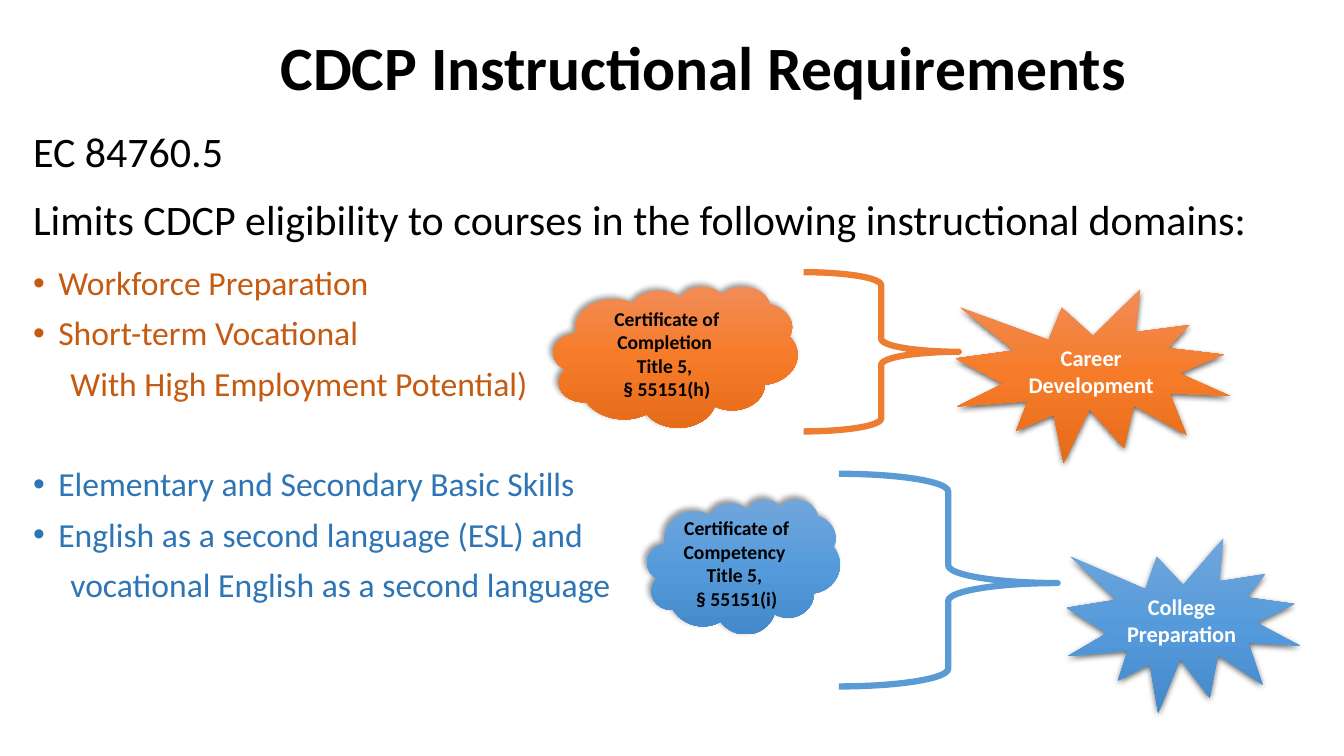
import copy

import pptx
import pptx.util
import pptx.dml.color
import pptx.enum.shapes
import pptx.enum.text
import pptx.oxml
import pptx.oxml.ns

PX = 9144  # 100 px to the inch
FONT = "Calibri"
KIND = pptx.enum.shapes.MSO_SHAPE
ALIGN = pptx.enum.text.PP_ALIGN
ANCHOR = pptx.enum.text.MSO_ANCHOR
NS = pptx.oxml.ns.nsdecls("a")

# Content
TITLE = "CDCP Instructional Requirements"
RUST, NAVY, BLACK, WHITE = "C55A11", "2E75B6", "000000", "FFFFFF"
LEAD = dict(size=30, color=BLACK, after=6)
WORK = dict(size=24, color=RUST)
STUDY = dict(size=24, color=NAVY)
POINT = dict(left=25, hang=25, bullet="•")
BODY = [
    ("EC 84760.5", LEAD),
    ("Limits CDCP eligibility to courses in the following instructional domains:", LEAD),
    ("Workforce Preparation", WORK | POINT),
    ("Short-term Vocational", WORK | POINT),
    ("With High Employment Potential)", WORK | dict(left=37)),
    ("Elementary and Secondary Basic Skills", STUDY | POINT | dict(before=46)),
    ("English as a second language (ESL) and", STUDY | POINT),
    ("vocational English as a second language", STUDY | dict(left=37)),
]

ORANGE = ("F18C57", "F67B28", "E56C19")
BLUE = ("71A6DB", "559BDB", "448ACA")
# Shadow: opacity %, blur pt, distance pt, angle
DROP = (63, 4.5, 1.5, 90)
EDGE = (40, 4, 3, 225)
BURST = KIND.EXPLOSION1
# Kind, box, gradient, shadow, lines, size, colour
FORMS = [
    (BURST, (1058, 534, 231, 173), BLUE, DROP, ["College Preparation"], 16, WHITE),
    (BURST, (948, 287, 272, 172), ORANGE, DROP, ["Career Development"], 16, WHITE),
    (KIND.CLOUD, (549, 284, 242, 140), ORANGE, EDGE,
     ["Certificate of Completion ", "Title 5, ", "§ 55151(h)"], 14, BLACK),
    (KIND.CLOUD, (642, 495, 191, 134), BLUE, EDGE,
     ["Certificate of Competency ", "Title 5, ", "§ 55151(i)"], 14, BLACK),
]
# Box, colour, tip position
BRACES = [
    ((797, 270, 154, 158), "ED7D31", 0.5),
    ((832, 470, 217, 211), "5B9BD5", 0.514),
]


def rgb(code):
    return pptx.dml.color.RGBColor.from_string(code)


def place(box):
    return [n * PX for n in box]


def write(frame, text, size=24, color=BLACK, bold=False, align=ALIGN.LEFT,
          space=0.9, before=10, after=0, left=0, hang=0, bullet=None):
    """Fill the first paragraph if it is free, else add one."""
    para = frame.paragraphs[0]
    if para.runs:
        para = frame.add_paragraph()
    para.alignment = align
    para.line_spacing = space
    para.space_before = pptx.util.Pt(before)
    para.space_after = pptx.util.Pt(after)
    run = para.add_run()
    run.text = text
    font = run.font
    font.name, font.size, font.bold = FONT, pptx.util.Pt(size), bold
    font.color.rgb = rgb(color)
    props = para._p.get_or_add_pPr()
    props.set("marL", str(left * PX))
    props.set("indent", str(-hang * PX))
    if bullet:
        props.append(pptx.oxml.parse_xml(f'<a:buFont {NS} typeface="Arial"/>'))
        props.append(pptx.oxml.parse_xml(f'<a:buChar {NS} char="{bullet}"/>'))


def shade(shape, tones):
    """Three-stop gradient from top to bottom."""
    fill = shape.fill
    fill.gradient()
    fill.gradient_angle = 270
    first = shape._element.spPr.find(".//" + pptx.oxml.ns.qn("a:gs"))
    first.addnext(copy.deepcopy(first))
    for k, (stop, tone) in enumerate(zip(fill.gradient_stops, tones)):
        stop.position = k / 2
        stop.color.rgb = rgb(tone)


def cast(shape, alpha, blur, dist, angle):
    """Put an outer shadow into the shape's effect list."""
    effects = shape._element.spPr.find(pptx.oxml.ns.qn("a:effectLst"))
    effects.append(pptx.oxml.parse_xml(
        f'<a:outerShdw {NS} blurRad="{pptx.util.Pt(blur)}" dist="{pptx.util.Pt(dist)}" '
        f'dir="{angle * 60000}" rotWithShape="0"><a:srgbClr val="{BLACK}">'
        f'<a:alpha val="{alpha * 1000}"/></a:srgbClr></a:outerShdw>'))


def main():
    deck = pptx.Presentation()
    deck.slide_width, deck.slide_height = 1333 * PX, 750 * PX
    slide = deck.slides.add_slide(deck.slide_layouts[6])
    shapes = slide.shapes

    # Title
    head = shapes.add_textbox(*place((267, -3, 862, 145))).text_frame
    head.word_wrap = True
    head.vertical_anchor = ANCHOR.MIDDLE
    write(head, TITLE, size=44, bold=True, align=ALIGN.CENTER, before=0)

    # Body
    body = shapes.add_textbox(*place((23, 125, 1242, 592))).text_frame
    body.word_wrap = True
    for text, style in BODY:
        write(body, text, **style)

    # Braces
    for box, color, tip in BRACES:
        brace = shapes.add_shape(KIND.RIGHT_BRACE, *place(box))
        brace.shadow.inherit = False
        brace.fill.background()
        brace.line.color.rgb = rgb(color)
        brace.line.width = pptx.util.Pt(4.5)
        brace.adjustments[1] = tip

    # Bursts and clouds
    for kind, box, tones, shadow, lines, size, color in FORMS:
        form = shapes.add_shape(kind, *place(box))
        form.shadow.inherit = False
        form.line.fill.background()
        shade(form, tones)
        cast(form, *shadow)
        frame = form.text_frame
        frame.word_wrap = True
        frame.vertical_anchor = ANCHOR.MIDDLE
        frame.margin_left = frame.margin_right = 5 * PX
        for line in lines:
            write(frame, line, size=size, color=color, bold=True,
                  align=ALIGN.CENTER, space=1.0, before=0)

    deck.save("out.pptx")


if __name__ == "__main__":
    main()
